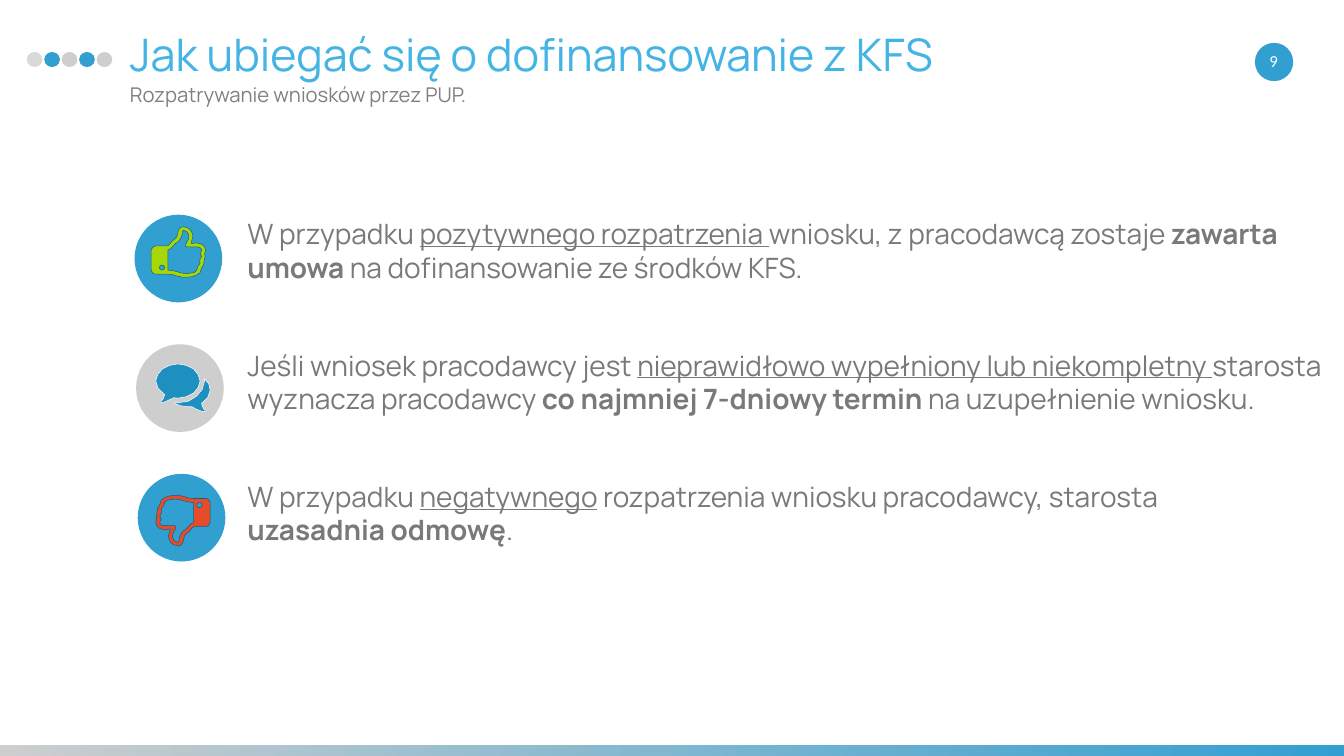
from pptx import Presentation
from pptx.dml.color import RGBColor as RGB
from pptx.enum.shapes import MSO_SHAPE as SHAPE
from pptx.util import Cm, Pt

THEME = dict(
    blue="329FD1", sky="43B4E3", deep="1D90C0", navy="136080", white="FFFFFF",
    gray="CECECE", pale="D9D9D9", body="797979", subtitle="808080",
    green="A8D709", red="E54C29",
    font="Manrope", number_font="Calibri",
    title_size=64, subtitle_size=29, body_size=40, number_size=24,
)

TITLE = "Jak ubiegać się o dofinansowanie z KFS"
SUBTITLE = "Rozpatrywanie wniosków przez PUP."
NUMBER = "9"
DOTS = ["pale", "blue", "gray", "blue", "gray"]

THUMB = [
    [(106, 54), (107, 59), (105, 68), (104, 76), (100, 82), (97, 91), (90, 96),
     (81, 99), (72, 100), (62, 100), (52, 98), (43, 95), (33, 94), (8, 94),
     (3, 92), (0, 86), (0, 46), (3, 41), (8, 38), (32, 38), (34, 37), (37, 34),
     (39, 32), (41, 29), (46, 25), (51, 20), (52, 16), (53, 12), (54, 7),
     (56, 4), (59, 1), (64, 0), (72, 2), (78, 6), (81, 12), (83, 19), (81, 26),
     (79, 33), (83, 33), (88, 32), (95, 33), (101, 35), (106, 40), (108, 46),
     (107, 50)],
    [(21, 86), (25, 85), (27, 81), (25, 77), (21, 76), (18, 77), (16, 81),
     (18, 85)],
    [(96, 67), (100, 59), (99, 56), (97, 54), (99, 50), (100, 46), (99, 43),
     (96, 41), (92, 40), (72, 40), (68, 39), (69, 34), (71, 30), (74, 25),
     (75, 19), (74, 15), (72, 11), (69, 9), (64, 7), (62, 9), (61, 17),
     (58, 24), (53, 30), (47, 34), (44, 38), (41, 41), (38, 44), (33, 46),
     (33, 86), (42, 87), (51, 89), (61, 92), (72, 93), (78, 92), (85, 91),
     (90, 87), (92, 81), (92, 79), (96, 75), (97, 71)],
]
BUBBLES = [
    [(88, 34), (84, 47), (75, 58), (61, 65), (44, 68), (36, 67), (17, 76),
     (12, 77), (10, 76), (10, 75), (13, 71), (15, 69), (16, 65), (18, 61),
     (5, 49), (0, 34), (4, 21), (13, 10), (27, 3), (44, 0), (61, 3), (75, 10),
     (84, 21)],
    [(108, 52), (103, 67), (91, 78), (92, 83), (95, 89), (98, 92), (98, 93),
     (96, 95), (91, 94), (81, 90), (72, 85), (64, 85), (49, 83), (37, 78),
     (38, 77), (44, 77), (65, 74), (81, 64), (92, 51), (97, 34), (96, 29),
     (105, 39)],
]

ROWS = [
    dict(circle="blue", icon=THUMB, at=(7.62, 11.43), fill="green", line="navy",
         turn=0, width=55.95,
         runs=[("W przypadku ", ""), ("pozytywnego rozpatrzenia ", "u"),
               ("wniosku, z pracodawcą zostaje ", ""), ("zawarta umowa", "b"),
               (" na dofinansowanie ze środków KFS.", "")]),
    dict(circle="gray", icon=BUBBLES, at=(7.85, 18.34), fill="deep", line="white",
         turn=0, width=55.95,
         runs=[("Jeśli wniosek pracodawcy jest ", ""),
               ("nieprawidłowo wypełniony lub niekompletny ", "u"),
               ("starosta wyznacza pracodawcy ", ""),
               ("co najmniej 7-dniowy termin", "b"),
               (" na uzupełnienie wniosku.", "")]),
    dict(circle="blue", icon=THUMB, at=(7.85, 24.97), fill="red", line="navy",
         turn=180, width=53.85,
         runs=[("W przypadku ", ""), ("negatywnego", "u"),
               (" rozpatrzenia wniosku pracodawcy, starosta ", ""),
               ("uzasadnia odmowę", "b"), (".", "")]),
]


def color(name):
    return RGB.from_string(THEME[name])


def add_filled(s, kind, box, fill):
    sp = s.shapes.add_shape(kind, *map(Cm, box))
    sp.shadow.inherit = False
    sp.line.fill.background()
    sp.fill.solid()
    sp.fill.fore_color.rgb = color(fill)
    return sp


def add_text(s, box, runs, size, fill, font="font"):
    tf = s.shapes.add_textbox(*map(Cm, box)).text_frame
    tf.word_wrap = True
    tf.margin_left = tf.margin_right = Cm(0.68)
    tf.margin_top = tf.margin_bottom = Cm(0.33)
    p = tf.paragraphs[0]
    for text, style in runs:
        r = p.add_run()
        r.text = text
        r.font.name = THEME[font]
        r.font.size = Pt(THEME[size])
        r.font.color.rgb = color(fill)
        r.font.bold = style == "b"
        r.font.underline = style == "u"


def add_icon(s, row):
    first, *others = row["icon"]
    fb = s.shapes.build_freeform(*first[0], scale=Cm(2.54) / 100)
    fb.add_line_segments(first[1:], close=True)
    for contour in others:
        fb.move_to(*contour[0])
        fb.add_line_segments(contour[1:], close=True)
    sp = fb.convert_to_shape(*map(Cm, row["at"]))
    sp.shadow.inherit = False
    sp.fill.solid()
    sp.fill.fore_color.rgb = color(row["fill"])
    sp.line.color.rgb = color(row["line"])
    sp.line.width = Pt(0.75)
    sp.rotation = row["turn"]


def main():
    prs = Presentation()
    prs.slide_width, prs.slide_height = Cm(67.74), Cm(38.1)
    s = prs.slides.add_slide(prs.slide_layouts[6])

    bar = add_filled(s, SHAPE.RECTANGLE, (0, 37.57, 67.74, 0.53), "gray")
    bar.fill.gradient()
    bar.fill.gradient_angle = 0
    for stop, name in zip(bar.fill.gradient_stops, ("gray", "blue")):
        stop.color.rgb = color(name)

    for i, name in enumerate(DOTS):
        add_filled(s, SHAPE.OVAL, (1.35 + 0.88 * i, 2.62, 0.79, 0.76), name)
    add_filled(s, SHAPE.OVAL, (63.25, 2.16, 1.93, 1.93), "blue")

    add_text(s, (5.87, 1.04, 53.98, 4.06), [(TITLE, "")], "title_size", "sky")
    add_text(s, (5.87, 3.81, 53.98, 2.16), [(SUBTITLE, "")], "subtitle_size", "subtitle")

    for i, row in enumerate(ROWS):
        add_text(s, (11.79, 10.59 + 6.62 * i, row["width"], 4.11), row["runs"],
                 "body_size", "body")
        add_filled(s, SHAPE.OVAL, (6.78 + 0.08 * i, 10.82 + 6.53 * i, 4.42, 4.42),
                   row["circle"])
        add_icon(s, row)

    add_text(s, (63.3, 2.21, 2.95, 2.03), [(NUMBER, "")], "number_size", "white",
             "number_font")
    prs.save("out.pptx")


if __name__ == "__main__":
    main()
